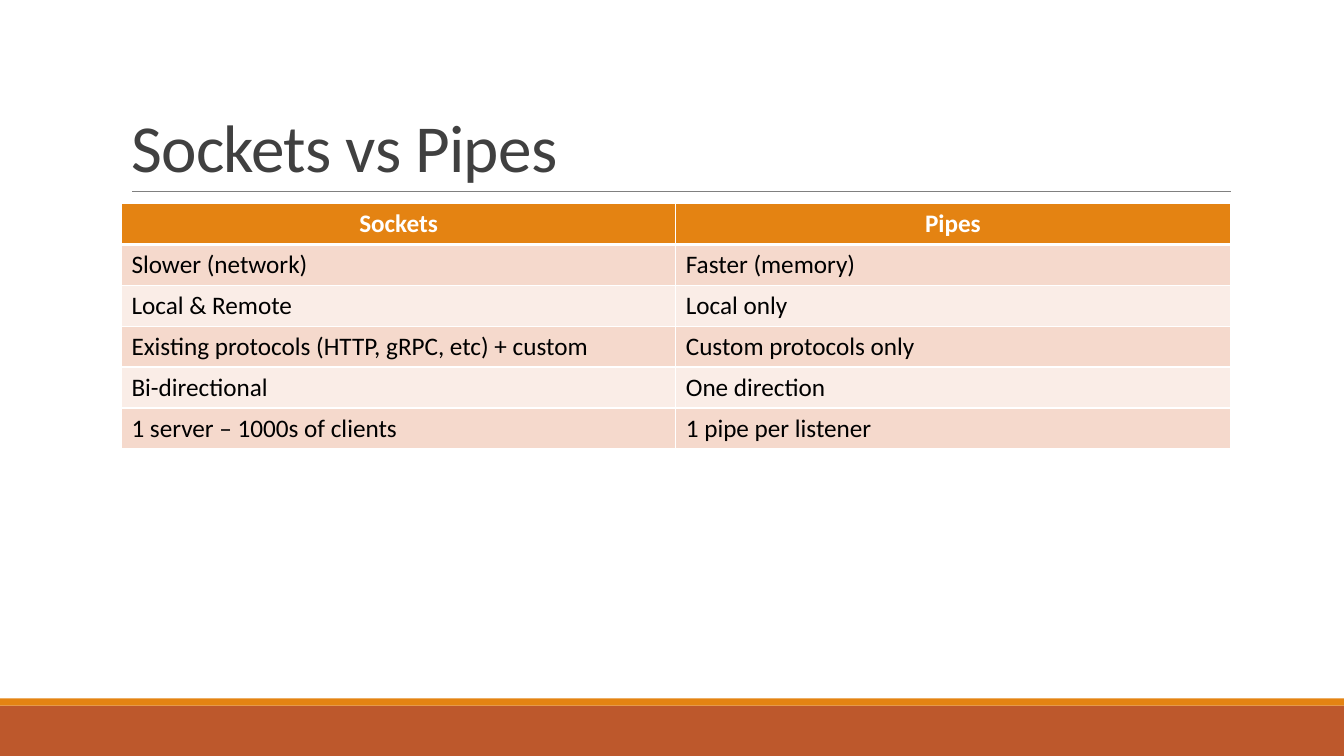
"""Build the slide that compares sockets and pipes in a table."""
from lxml import etree
from pptx import Presentation
from pptx.dml import color
from pptx.enum import shapes, text
from pptx.oxml import ns
from pptx.util import Cm, Pt


def rgb(value):
    return color.RGBColor.from_string(value)


def add_border(cell, side, points):
    line = etree.SubElement(cell._tc.get_or_add_tcPr(), ns.qn(f"a:{side}"), w=str(Pt(points)))
    fill = etree.SubElement(line, ns.qn("a:solidFill"))
    etree.SubElement(fill, ns.qn("a:srgbClr"), val="FFFFFF")


deck = Presentation()
deck.slide_width, deck.slide_height = Cm(33.87), Cm(19.05)
page = deck.slides.add_slide(deck.slide_layouts[6])

for top, height, shade in [(17.78, 1.27, "BD582C"), (17.6, 0.18, "E48312")]:
    band = page.shapes.add_shape(
        shapes.MSO_SHAPE.RECTANGLE, 0, Cm(top), deck.slide_width, Cm(height))
    band.shadow.inherit = False
    band.fill.solid()
    band.fill.fore_color.rgb = rgb(shade)
    band.line.fill.background()

rule = page.shapes.add_connector(
    shapes.MSO_CONNECTOR.STRAIGHT, Cm(3.33), Cm(4.82), Cm(31.01), Cm(4.82))
rule.line.color.rgb = rgb("808080")
rule.line.width = Pt(0.5)
etree.SubElement(rule._element.spPr, ns.qn("a:effectLst"))

title = page.shapes.add_textbox(Cm(3.06), Cm(0.79), Cm(27.94), Cm(4.03))
title.text_frame.word_wrap = True
title.text_frame.vertical_anchor = text.MSO_ANCHOR.BOTTOM
title.text_frame.text = "Sockets vs Pipes"
para = title.text_frame.paragraphs[0]
para.line_spacing = 0.85
span = para.runs[0]
span.font.name = "Calibri"
span.font.size = Pt(48)
span.font.color.rgb = rgb("404040")
span._r.get_or_add_rPr().set("spc", "-50")

comparison = [
    ("Sockets", "Pipes"),
    ("Slower (network)", "Faster (memory)"),
    ("Local & Remote", "Local only"),
    ("Existing protocols (HTTP, gRPC, etc) + custom", "Custom protocols only"),
    ("Bi-directional", "One direction"),
    ("1 server – 1000s of clients", "1 pipe per listener"),
]
table = page.shapes.add_table(
    len(comparison), 2, Cm(3.06), Cm(5.13), Cm(27.94), Cm(6.18)).table

for row, entries in enumerate(comparison):
    header = row == 0
    for column, entry in enumerate(entries):
        cell = table.cell(row, column)
        for side in ("lnL", "lnR", "lnT", "lnB"):
            thick = (header and side == "lnB") or (row == 1 and side == "lnT")
            add_border(cell, side, 3 if thick else 1)
        cell.fill.solid()
        cell.fill.fore_color.rgb = rgb(
            "E48312" if header else "F5D9CC" if row % 2 else "FAEDE7")
        cell.text_frame.text = entry
        para = cell.text_frame.paragraphs[0]
        para.alignment = text.PP_ALIGN.CENTER if header else text.PP_ALIGN.LEFT
        font = para.runs[0].font
        font.name = "Calibri"
        font.size = Pt(18)
        font.bold = header
        font.color.rgb = rgb("FFFFFF" if header else "000000")

deck.save("out.pptx")
